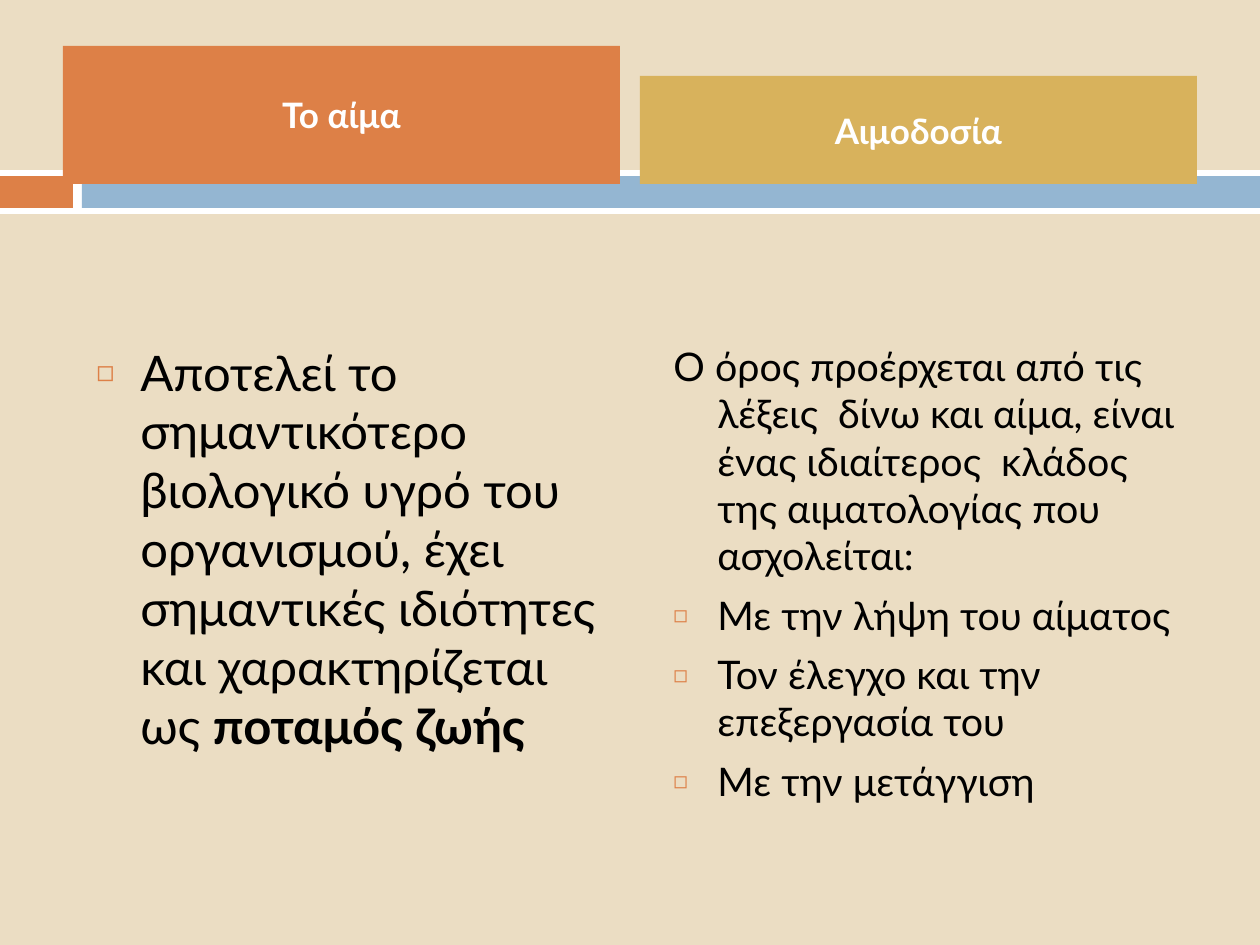
import dataclasses
import pptx
import pptx.dml.color
import pptx.enum.shapes
import pptx.enum.text
import pptx.oxml.ns
import pptx.util
from lxml import etree

SCALE = 914400 / 126


@dataclasses.dataclass(frozen=True)
class Theme:
    back: str = "EBDDC3"
    white: str = "FFFFFF"
    ink: str = "000000"
    warm: str = "DD8047"
    cool: str = "94B6D2"
    gold: str = "D8B25C"
    font: str = "Lato"
    head: float = 20
    large: float = 28
    small: float = 22.5
    gap: float = 7


THEME = Theme()


def emu(px):
    return round(px * SCALE)


def tint(hue):
    return pptx.dml.color.RGBColor.from_string(hue)


def apply(item, form):
    for name, value in form.items():
        setattr(item, name, value)


def write(para, text, size, hue, bold=False):
    run = para.add_run()
    run.text = text
    apply(run.font, {"name": THEME.font, "size": pptx.util.Pt(size), "bold": bold})
    run.font.color.rgb = tint(hue)


def block(slide, box, hue):
    rect = pptx.enum.shapes.MSO_SHAPE.RECTANGLE
    shape = slide.shapes.add_shape(rect, *map(emu, box))
    shape.shadow.inherit = False
    shape.fill.solid()
    shape.fill.fore_color.rgb = tint(hue)
    shape.line.fill.background()
    return shape


def band(slide, box):
    left, top, width, height = box
    edge, key, split = 6, 73, 82
    inner = height - 2 * edge
    block(slide, box, THEME.white)
    block(slide, (left, top + edge, key, inner), THEME.warm)
    block(slide, (left + split, top + edge, width - split, inner), THEME.cool)


def header(slide, box, text, hue):
    frame = block(slide, box, hue).text_frame
    apply(frame, {"word_wrap": True,
                  "vertical_anchor": pptx.enum.text.MSO_ANCHOR.MIDDLE})
    para = frame.paragraphs[0]
    para.alignment = pptx.enum.text.PP_ALIGN.CENTER
    write(para, text, THEME.head, THEME.white, True)


def indent(para, mark):
    props = para._p.get_or_add_pPr()
    props.set("marL", str(emu(44)))
    props.set("indent", str(-emu(44)))
    if not mark:
        return
    tag = pptx.oxml.ns.qn
    color = etree.SubElement(props, tag("a:buClr"))
    etree.SubElement(color, tag("a:srgbClr"), val=THEME.warm)
    etree.SubElement(props, tag("a:buSzPct"), val="60000")
    etree.SubElement(props, tag("a:buFont"), typeface=THEME.font)
    etree.SubElement(props, tag("a:buChar"), char="◻")


def body(slide, box, items, size):
    frame = slide.shapes.add_textbox(*map(emu, box)).text_frame
    frame.word_wrap = True
    for place, (mark, runs) in enumerate(items):
        para = frame.add_paragraph() if place else frame.paragraphs[0]
        indent(para, mark)
        if place:
            para.space_before = pptx.util.Pt(THEME.gap)
        for text, bold in runs:
            write(para, text, size, THEME.ink, bold)


def column(slide, box, inset, title, hue, items, size):
    left, top, width, base = box
    header(slide, (left, top, width, base - top), title, hue)
    body(slide, (left + inset, base + 152, width - inset, 494), items, size)


def main():
    deck = pptx.Presentation()
    apply(deck, {"slide_width": emu(1260), "slide_height": emu(945)})
    slide = deck.slides.add_slide(deck.slide_layouts[6])
    slide.background.fill.solid()
    slide.background.fill.fore_color.rgb = tint(THEME.back)

    band(slide, (0, 170, 1260, 44))
    blood = [(True, [
        ("Αποτελεί το σημαντικότερο βιολογικό υγρό του οργανισμού, έχει "
         "σημαντικές ιδιότητες και χαρακτηρίζεται ως ", False),
        ("ποταμός ζωής", True),
    ])]
    gift = [(False, [
        ("Ο όρος προέρχεται από τις λέξεις  δίνω και αίμα, είναι ένας "
         "ιδιαίτερος  κλάδος της αιματολογίας που ασχολείται:", False),
    ])]
    gift += [(True, [(text, False)]) for text in (
        "Με την λήψη του αίματος",
        "Τον έλεγχο και την επεξεργασία του",
        "Με την μετάγγιση",
    )]
    column(slide, (63, 46, 557, 184), 21, "Το αίμα", THEME.warm,
           blood, THEME.large)
    column(slide, (640, 76, 557, 184), 21, "Αιμοδοσία", THEME.gold,
           gift, THEME.small)
    deck.save("out.pptx")


if __name__ == "__main__":
    main()
